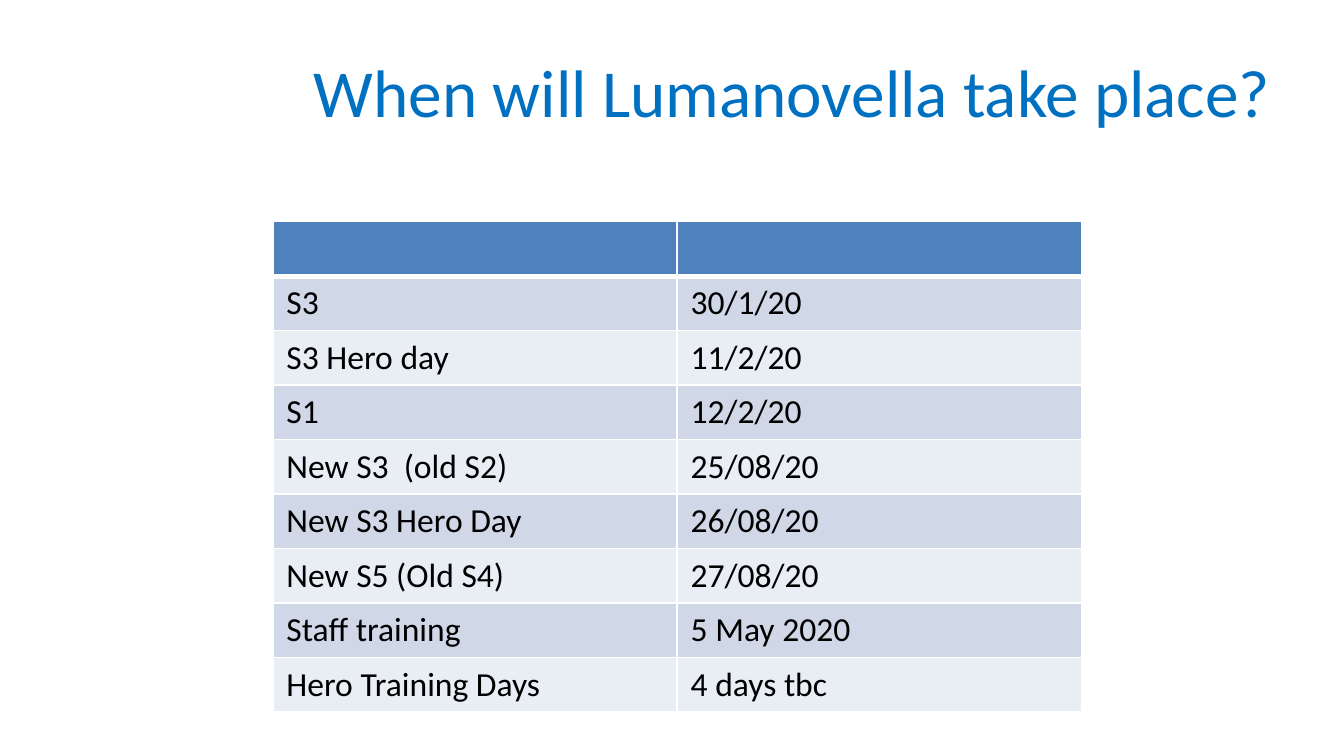
from typing import NamedTuple

from lxml.etree import SubElement
from pptx import Presentation
from pptx.dml.color import RGBColor
from pptx.enum.text import MSO_ANCHOR, PP_ALIGN
from pptx.oxml.ns import qn
from pptx.util import Cm, Pt

WHITE = RGBColor(0xFF, 0xFF, 0xFF)
BLACK = RGBColor(0x00, 0x00, 0x00)
BLUE = RGBColor(0x00, 0x70, 0xC0)
HEAD = RGBColor(0x4F, 0x81, 0xBD)
BANDS = (RGBColor(0xD0, 0xD8, 0xE8), RGBColor(0xE9, 0xED, 0xF4))
FONT = "Calibri"


class Event(NamedTuple):
    name: str
    date: str


EVENTS = [
    Event("S3", "30/1/20"),
    Event("S3 Hero day", "11/2/20"),
    Event("S1", "12/2/20"),
    Event("New S3  (old S2)", "25/08/20"),
    Event("New S3 Hero Day", "26/08/20"),
    Event("New S5 (Old S4)", "27/08/20"),
    Event("Staff training", "5 May 2020"),
    Event("Hero Training Days", "4 days tbc"),
]


def style(para, size: int, color: RGBColor) -> None:
    para.font.name = FONT
    para.font.size = Pt(size)
    para.font.color.rgb = color


def border(cell, side: str, width: float) -> None:
    props = cell._tc.get_or_add_tcPr()
    line = SubElement(props, qn(f"a:ln{side}"), w=str(Pt(width)))
    fill = SubElement(line, qn("a:solidFill"))
    SubElement(fill, qn("a:srgbClr"), val=str(WHITE))


def paint(cell, text: str, fill: RGBColor, color: RGBColor, top: int, base: int) -> None:
    for side, width in (("L", 1), ("R", 1), ("T", top), ("B", base)):
        border(cell, side, width)
    cell.fill.solid()
    cell.fill.fore_color.rgb = fill
    cell.text = text
    style(cell.text_frame.paragraphs[0], 18, color)


def add_title(slide, text: str) -> None:
    frame = slide.shapes.add_textbox(Cm(1.32), Cm(0.64), Cm(22.94), Cm(2.13)).text_frame
    frame.word_wrap = True
    frame.vertical_anchor = MSO_ANCHOR.MIDDLE
    para = frame.paragraphs[0]
    para.text = text
    para.alignment = PP_ALIGN.RIGHT
    style(para, 36, BLUE)


def add_dates(slide, events: list[Event]) -> None:
    count = len(events) + 1
    table = slide.shapes.add_table(
        count, 2, Cm(5.16), Cm(4.19), Cm(15.28), Cm(1.03) * count
    ).table
    for cell in table.rows[0].cells:
        paint(cell, "", HEAD, WHITE, 1, 3)
    for row, event in enumerate(events, 1):
        for col, text in enumerate(event):
            fill = BANDS[(row - 1) % 2]
            paint(table.cell(row, col), text, fill, BLACK, 3 if row == 1 else 1, 1)


def main() -> None:
    deck = Presentation()
    deck.slide_width, deck.slide_height = Cm(25.4), Cm(14.29)
    slide = deck.slides.add_slide(deck.slide_layouts[6])
    add_title(slide, "When will Lumanovella take place?")
    add_dates(slide, EVENTS)
    deck.save("out.pptx")


if __name__ == "__main__":
    main()
